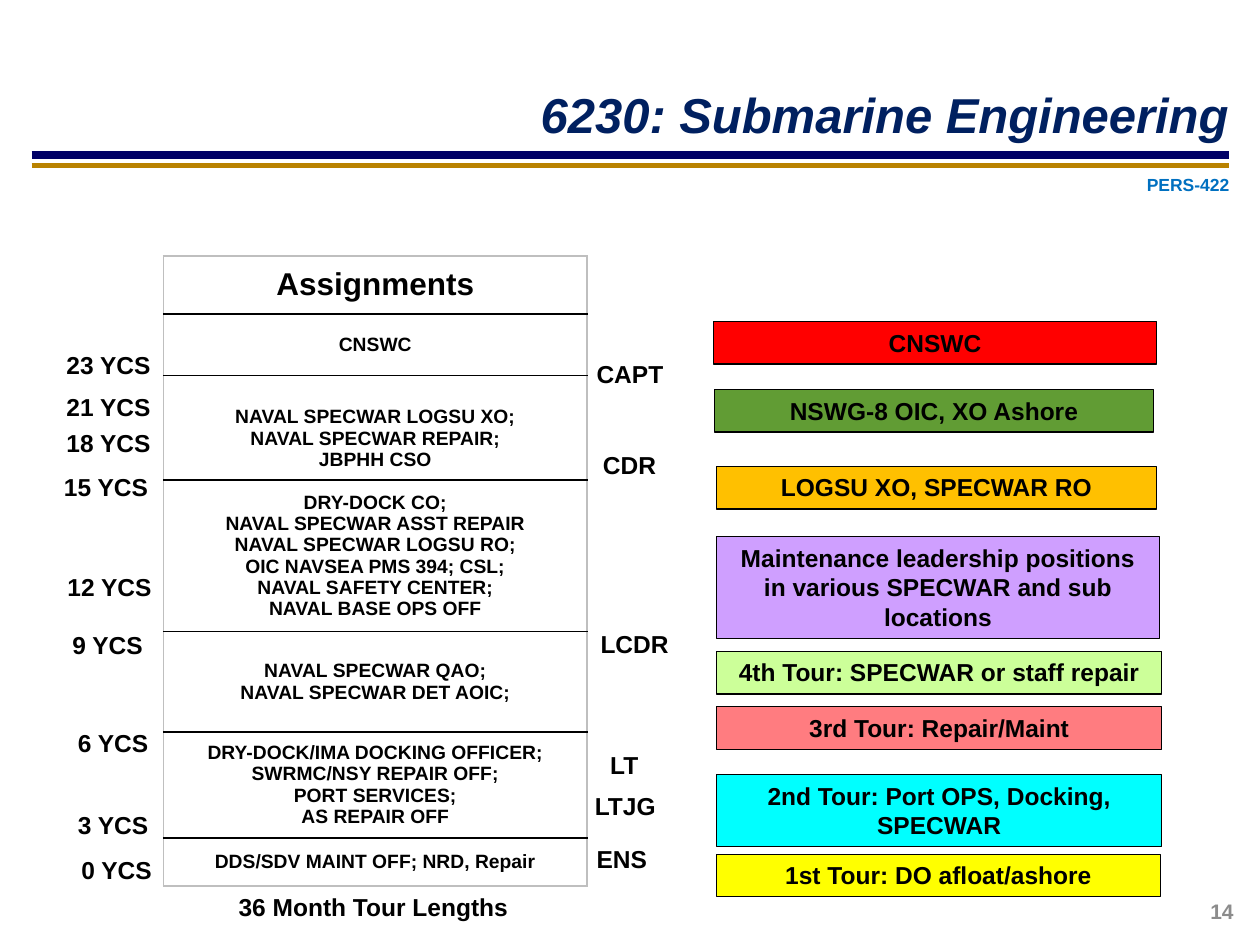
from typing import NamedTuple

import pptx
import pptx.dml.color
import pptx.enum.shapes
import pptx.enum.text
import pptx.oxml
import pptx.oxml.ns
import pptx.util
from pptx.util import Cm, Pt

Align = pptx.enum.text.PP_ALIGN
Anchor = pptx.enum.text.MSO_ANCHOR
qn = pptx.oxml.ns.qn
NAMESPACE = pptx.oxml.ns.nsdecls("a")


class Label(NamedTuple):
    text: str
    left: float
    top: float
    width: float


class Tour(NamedTuple):
    text: str
    fill: str
    left: float
    top: float
    width: float
    height: float = 0.86


class Assignment(NamedTuple):
    lines: list[str]
    height: float
    size: float = 11


class Rule(NamedTuple):
    top: float
    colour: str
    weight: float


YEARS = [
    Label("23 YCS", 1.07, 6.93, 2.24),
    Label("21 YCS", 1.07, 7.77, 2.24),
    Label("18 YCS", 1.07, 8.51, 2.24),
    Label("15 YCS", 1.02, 9.4, 2.24),
    Label("12 YCS", 1.09, 11.4, 2.24),
    Label("9 YCS", 1.19, 12.57, 1.96),
    Label("6 YCS", 1.3, 14.55, 1.96),
    Label("3 YCS", 1.3, 16.21, 1.96),
    Label("0 YCS", 1.37, 17.12, 1.96),
]
RANKS = [
    Label("CAPT", 11.76, 7.11, 1.88),
    Label("CDR", 11.89, 8.94, 1.6),
    Label("LCDR", 11.84, 12.55, 1.91),
    Label("LT", 12.04, 14.99, 1.09),
    Label("LTJG", 11.73, 15.82, 1.75),
    Label("ENS", 11.76, 16.89, 1.55),
]
TOURS = [
    Tour("CNSWC", "FF0000", 14.38, 6.48, 8.94),
    Tour("NSWG-8 OIC, XO Ashore", "619C34", 14.4, 7.85, 8.86),
    Tour("LOGSU XO, SPECWAR RO", "FFC000", 14.45, 9.4, 8.86),
    Tour("Maintenance leadership positions in various SPECWAR and sub locations",
         "CF9FFF", 14.45, 10.82, 8.92, 2.06),
    Tour("4th Tour: SPECWAR or staff repair", "CCFF99", 14.45, 13.13, 8.97),
    Tour("3rd Tour: Repair/Maint", "FF7C80", 14.45, 14.25, 8.97),
    Tour("2nd Tour: Port OPS, Docking, SPECWAR", "00FFFF", 14.45, 15.62, 8.97, 1.45),
    Tour("1st Tour: DO afloat/ashore", "FFFF00", 14.45, 17.22, 8.94),
]
ASSIGNMENTS = [
    Assignment(["Assignments"], 1.17, 18),
    Assignment(["CNSWC"], 1.24),
    Assignment(["NAVAL SPECWAR LOGSU XO;", "NAVAL SPECWAR REPAIR;", "JBPHH CSO"], 2.11),
    Assignment(["DRY-DOCK CO;", "NAVAL SPECWAR ASST REPAIR", "NAVAL SPECWAR LOGSU RO;",
                "OIC NAVSEA PMS 394; CSL;", "NAVAL SAFETY CENTER;", "NAVAL BASE OPS OFF"], 3.05),
    Assignment(["NAVAL SPECWAR QAO;", "NAVAL SPECWAR DET AOIC;"], 2.03),
    Assignment(["DRY-DOCK/IMA DOCKING OFFICER;", "SWRMC/NSY REPAIR OFF;",
                "PORT SERVICES;", "AS REPAIR OFF"], 2.13),
    Assignment(["DDS/SDV MAINT OFF; NRD, Repair"], 0.97),
]
LOWERED_ROW = 2
RULES = [Rule(3.12, "000066", 4.5), Rule(3.33, "B98200", 2.75)]


def rgb(colour: str) -> pptx.dml.color.RGBColor:
    return pptx.dml.color.RGBColor.from_string(colour)


def style(para, size: float, colour: str = "000000", align=Align.CENTER) -> None:
    para.alignment = align
    para.font.name = "Arial"
    para.font.size = Pt(size)
    para.font.bold = True
    para.font.color.rgb = rgb(colour)


def add_text(page, label: Label, height: float, size: float = 14,
             colour: str = "000000", wrap: bool = False):
    box = page.shapes.add_textbox(Cm(label.left), Cm(label.top), Cm(label.width), Cm(height))
    box.text_frame.word_wrap = wrap
    box.text_frame.text = label.text
    style(box.text_frame.paragraphs[0], size, colour)
    return box


def add_tour(page, tour: Tour) -> None:
    box = page.shapes.add_shape(
        pptx.enum.shapes.MSO_SHAPE.RECTANGLE,
        Cm(tour.left), Cm(tour.top), Cm(tour.width), Cm(tour.height))
    box.shadow.inherit = False
    box.fill.solid()
    box.fill.fore_color.rgb = rgb(tour.fill)
    box.line.color.rgb = rgb("000000")
    box.line.width = Pt(0.75)
    frame = box.text_frame
    frame.word_wrap = True
    frame.vertical_anchor = Anchor.TOP
    frame.text = tour.text
    style(frame.paragraphs[0], 14)


def add_rule(page, rule: Rule) -> None:
    line = page.shapes.add_connector(
        pptx.enum.shapes.MSO_CONNECTOR.STRAIGHT,
        Cm(0.64), Cm(rule.top), Cm(24.77), Cm(rule.top))
    line.line.color.rgb = rgb(rule.colour)
    line.line.width = Pt(rule.weight)
    line._element.spPr.append(pptx.oxml.parse_xml(f"<a:effectLst {NAMESPACE}/>"))


def set_borders(cell, colours: dict[str, str]) -> None:
    properties = cell._tc.get_or_add_tcPr()
    for position, (side, colour) in enumerate(colours.items()):
        properties.insert(position, pptx.oxml.parse_xml(
            f'<a:{side} {NAMESPACE} w="12700"><a:solidFill>'
            f'<a:srgbClr val="{colour}"/></a:solidFill></a:{side}>'))


def add_assignments(page) -> None:
    total = sum(row.height for row in ASSIGNMENTS)
    table = page.shapes.add_table(
        len(ASSIGNMENTS), 1, Cm(3.3), Cm(5.16), Cm(8.53), Cm(total)).table
    table.first_row = table.horz_banding = False
    last = len(ASSIGNMENTS) - 1
    for index, row in enumerate(ASSIGNMENTS):
        table.rows[index].height = Cm(row.height)
        cell = table.cell(index, 0)
        cell.fill.background()
        cell.vertical_anchor = Anchor.MIDDLE
        if index == LOWERED_ROW:
            cell.margin_top = Cm(0.56)
        cell.text = "\n".join(row.lines)
        for para in cell.text_frame.paragraphs:
            style(para, row.size)
            if len(row.lines) > 1:
                para.line_spacing = Pt(12.2)
        set_borders(cell, {
            "lnL": "BFBFBF", "lnR": "BFBFBF",
            "lnT": "BFBFBF" if index == 0 else "000000",
            "lnB": "BFBFBF" if index == last else "000000"})


def add_title(page) -> None:
    title = page.shapes.title
    title.left, title.top, title.width, title.height = Cm(6.4), Cm(1.5), Cm(18.62), Cm(1.6)
    title.text_frame.text = "6230: Submarine Engineering"
    title.text_frame.vertical_anchor = Anchor.MIDDLE
    para = title.text_frame.paragraphs[0]
    style(para, 28, "002060", Align.RIGHT)
    para.font.italic = True


def add_page_number(page) -> None:
    box = add_text(page, Label("14", 17.07, 17.86, 8.05), 1.02, 12, "8C8C8C", wrap=True)
    box.text_frame.vertical_anchor = Anchor.MIDDLE
    box.text_frame.paragraphs[0].alignment = Align.RIGHT


def main() -> None:
    deck = pptx.Presentation()
    deck.slide_width, deck.slide_height = Cm(25.4), Cm(19.05)
    page = deck.slides.add_slide(deck.slide_layouts[5])
    add_title(page)
    for rule in RULES:
        add_rule(page, rule)
    add_text(page, Label("PERS-422", 22.86, 3.38, 2.18), 0.69, 10, "0070C0")
    add_assignments(page)
    for label in YEARS + RANKS:
        add_text(page, label, 0.9)
    for tour in TOURS:
        add_tour(page, tour)
    add_text(page, Label("36 Month Tour Lengths", 4.09, 17.86, 6.88), 0.86, wrap=True)
    add_page_number(page)
    deck.save("out.pptx")


if __name__ == "__main__":
    main()
